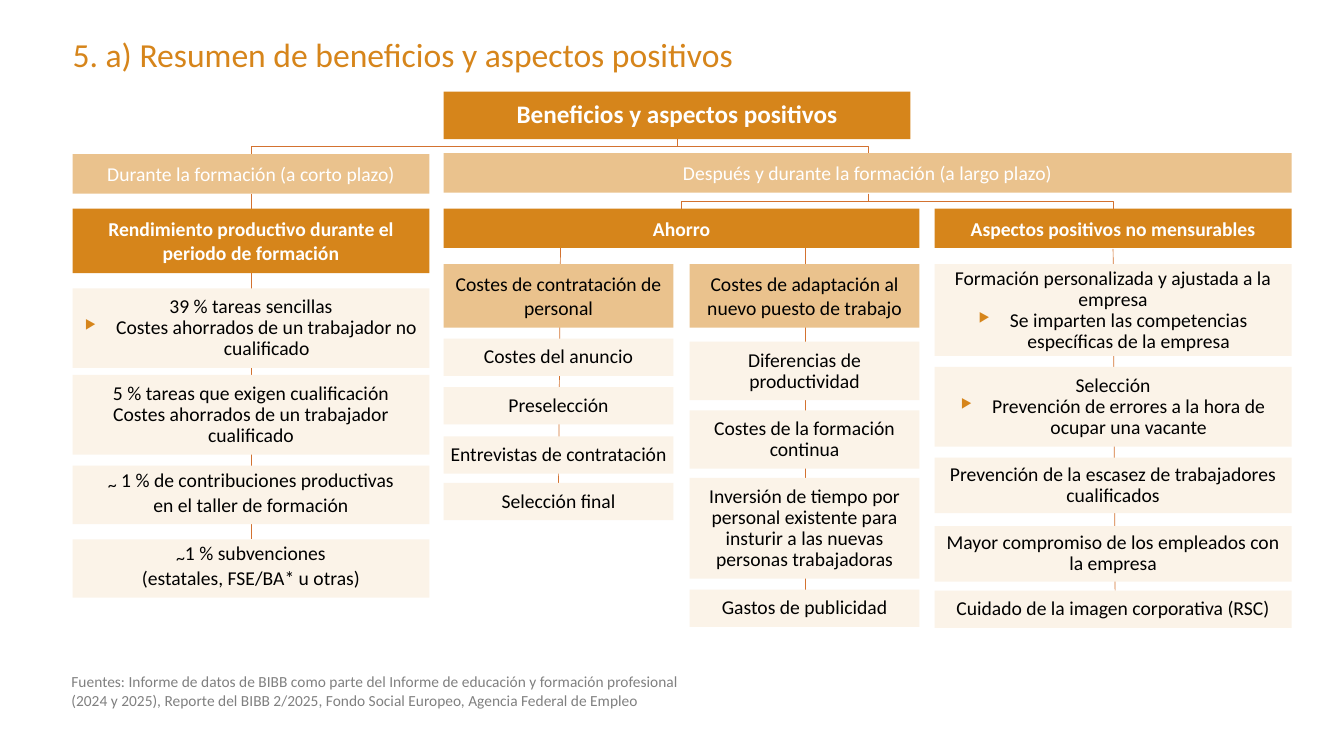
from lxml import etree
from pptx import Presentation
from pptx import util as u
from pptx.dml.color import RGBColor
from pptx.enum import shapes, text
from pptx.oxml import ns

PX = 9144  # EMU; 100 px to the inch
ORANGE, SAND, CREAM, LINE = "D6851B", "EAC28D", "FBF3E8", "D37230"
WHITE, BLACK, GREY = "FFFFFF", "000000", "808080"
WIDE, NARROW = 354, 228
LEFT, HIRING, ADAPTING, RIGHT = 72, 440, 684, 927

# x, width, [(top, height, paragraphs)]
COLUMNS = [
    (LEFT, WIDE, [
        (286, 79, ["39 % tareas sencillas",
                   "▶Costes ahorrados de un trabajador no cualificado"]),
        (372, 79, ["5 % tareas que exigen cualificación",
                   "Costes ahorrados de un trabajador cualificado"]),
        (462, 58, ["~ 1 % de contribuciones productivas\nen el taller de formación"]),
        (535, 58, ["~1 % subvenciones\n(estatales, FSE/BA* u otras)"]),
    ]),
    (HIRING, NARROW, [
        (336, 37, ["Costes del anuncio"]),
        (384, 37, ["Preselección"]),
        (433, 37, ["Entrevistas de contratación"]),
        (479, 37, ["Selección final"]),
    ]),
    (ADAPTING, NARROW, [
        (339, 58, ["Diferencias de productividad"]),
        (407, 58, ["Costes de la formación continua"]),
        (474, 100, ["Inversión de tiempo por personal existente para "
                    "insturir a las nuevas personas trabajadoras"]),
        (585, 37, ["Gastos de publicidad"]),
    ]),
    (RIGHT, WIDE, [
        (262, 91, ["Formación personalizada y ajustada a la empresa",
                   "▶Se imparten las competencias específicas de la empresa"]),
        (364, 79, ["Selección",
                   "▶Prevención de errores a la hora de ocupar una vacante"]),
        (454, 55, ["Prevención de la escasez de trabajadores cualificados"]),
        (522, 55, ["Mayor compromiso de los empleados con la empresa"]),
        (586, 37, ["Cuidado de la imagen corporativa (RSC)"]),
    ]),
]

# x, top, width, height, text, fill, font colour, bold, line spacing
HEADINGS = [
    (LEFT, 153, WIDE, 39, "Durante la formación (a corto plazo)", SAND, WHITE, False, None),
    (HIRING, 152, 841, 39, "Después y durante la formación (a largo plazo)",
     SAND, WHITE, False, None),
    (LEFT, 207, WIDE, 64, "Rendimiento productivo durante el periodo de formación",
     ORANGE, WHITE, True, u.Pt(17)),
    (HIRING, 207, 472, 39, "Ahorro", ORANGE, WHITE, True, None),
    (RIGHT, 207, WIDE, 39, "Aspectos positivos no mensurables", ORANGE, WHITE, True, None),
    (HIRING, 262, NARROW, 63, "Costes de contratación de personal",
     SAND, BLACK, False, None),
    (ADAPTING, 262, NARROW, 63, "Costes de adaptación al nuevo puesto de trabajo",
     SAND, BLACK, False, None),
]

TRUNKS = [(556, 233, 554, 479), (799, 237, 799, 585),
          (1104, 247, 1106, 586), (249, 192, 249, 535)]
BRANCHES = [(672, 138, 249, 153), (672, 138, 861, 152),
            (861, 192, 676, 207), (861, 192, 1104, 207)]


def rgb(color):
    return RGBColor.from_string(color)


def add_bullet(p, char):
    pPr = p._p.get_or_add_pPr()
    pPr.set("marL", str(31 * PX))
    pPr.set("indent", str(-31 * PX))
    color = etree.SubElement(pPr, ns.qn("a:buClr"))
    etree.SubElement(color, ns.qn("a:srgbClr"), val=ORANGE)
    etree.SubElement(pPr, ns.qn("a:buSzPct"), val="65000")
    etree.SubElement(pPr, ns.qn("a:buChar"), char=char)


def add_run(p, words, size, color, bold):
    r = p.add_run()
    r.text = words
    r.font.name = "Calibri"
    r.font.size = u.Pt(size)
    r.font.bold = bold
    r.font.color.rgb = rgb(color)
    return r


def write(tf, paragraphs, size=14, color=BLACK, bold=False, align=text.PP_ALIGN.CENTER,
          spacing=None, anchor=text.MSO_ANCHOR.MIDDLE, inset=(4, 8)):
    """Fill a frame; a leading ▶ makes a bullet, ~ is set large and lowered."""
    tf.word_wrap = True
    tf.vertical_anchor = anchor
    tf.margin_left = tf.margin_right = inset[0] * PX
    tf.margin_top = tf.margin_bottom = inset[1] * PX
    for i, words in enumerate(paragraphs):
        p = tf.add_paragraph() if i else tf.paragraphs[0]
        if words.startswith("▶"):
            add_bullet(p, "▶")
            words = words[1:]
        p.alignment = align
        if spacing:
            p.line_spacing = spacing
        for n, line in enumerate(words.split("\n")):
            if n:
                p.add_line_break()
            if line.startswith("~"):
                tilde = add_run(p, "~", 22, color, bold)
                tilde.font._element.set("baseline", "-14000")
                line = line[1:]
            add_run(p, line, size, color, bold)


def add_box(s, x, y, w, h, fill, paragraphs, **fmt):
    sp = s.shapes.add_shape(shapes.MSO_SHAPE.RECTANGLE, x * PX, y * PX, w * PX, h * PX)
    sp.shadow.inherit = False
    sp.fill.solid()
    sp.fill.fore_color.rgb = rgb(fill)
    sp.line.fill.background()
    write(sp.text_frame, paragraphs, **fmt)


def add_label(s, x, y, w, h, words, **fmt):
    sp = s.shapes.add_textbox(x * PX, y * PX, w * PX, h * PX)
    write(sp.text_frame, [words], align=text.PP_ALIGN.LEFT, **fmt)


def add_line(s, x1, y1, x2, y2, kind=shapes.MSO_CONNECTOR.STRAIGHT):
    c = s.shapes.add_connector(kind, *(int(v * PX) for v in (x1, y1, x2, y2)))
    c.line.color.rgb = rgb(LINE)
    c.line.width = u.Pt(0.5)
    etree.SubElement(c._element.spPr, ns.qn("a:effectLst"))
    return c


def add_branch(s, x1, y1, x2, y2):
    """Elbow that leaves downwards: a horizontal elbow turned by a quarter."""
    cx, cy = (x1 + x2) / 2, (y1 + y2) / 2
    half_w, half_h = (y2 - y1) / 2, abs(x2 - x1) / 2
    turn = 90
    if x2 > x1:
        half_w, turn = -half_w, 270
    c = add_line(s, cx - half_w, cy - half_h, cx + half_w, cy + half_h,
                 shapes.MSO_CONNECTOR.ELBOW)
    c._element.spPr.find(ns.qn("a:xfrm")).set("rot", str(turn * 60000))


def main():
    prs = Presentation()
    prs.slide_width, prs.slide_height = 1333 * PX, 750 * PX
    s = prs.slides.add_slide(prs.slide_layouts[6])

    for trunk in TRUNKS:
        add_line(s, *trunk)
    add_label(s, 72, 32, 984, 49, "5. a) Resumen de beneficios y aspectos positivos",
              size=24, color=ORANGE, spacing=0.9, inset=(0, 0))
    add_box(s, HIRING, 91, 463, 47, ORANGE, ["Beneficios y aspectos positivos"],
            size=18, color=WHITE, bold=True, spacing=0.9, inset=(0, 0))
    for x, y, w, h, words, fill, color, bold, spacing in HEADINGS:
        add_box(s, x, y, w, h, fill, [words], color=color, bold=bold, spacing=spacing)
    for x, w, boxes in COLUMNS:
        for y, h, paragraphs in boxes:
            add_box(s, x, y, w, h, CREAM, paragraphs, spacing=u.Pt(15))
    for branch in BRANCHES:
        add_branch(s, *branch)
    add_label(s, 61, 662, 799, 47,
              "Fuentes: Informe de datos de BIBB como parte del Informe de educación y "
              "formación profesional\n(2024 y 2025), Reporte del BIBB 2/2025, "
              "Fondo Social Europeo, Agencia Federal de Empleo",
              size=11, color=GREY, anchor=text.MSO_ANCHOR.TOP, inset=(10, 5))
    prs.save("out.pptx")


if __name__ == "__main__":
    main()
